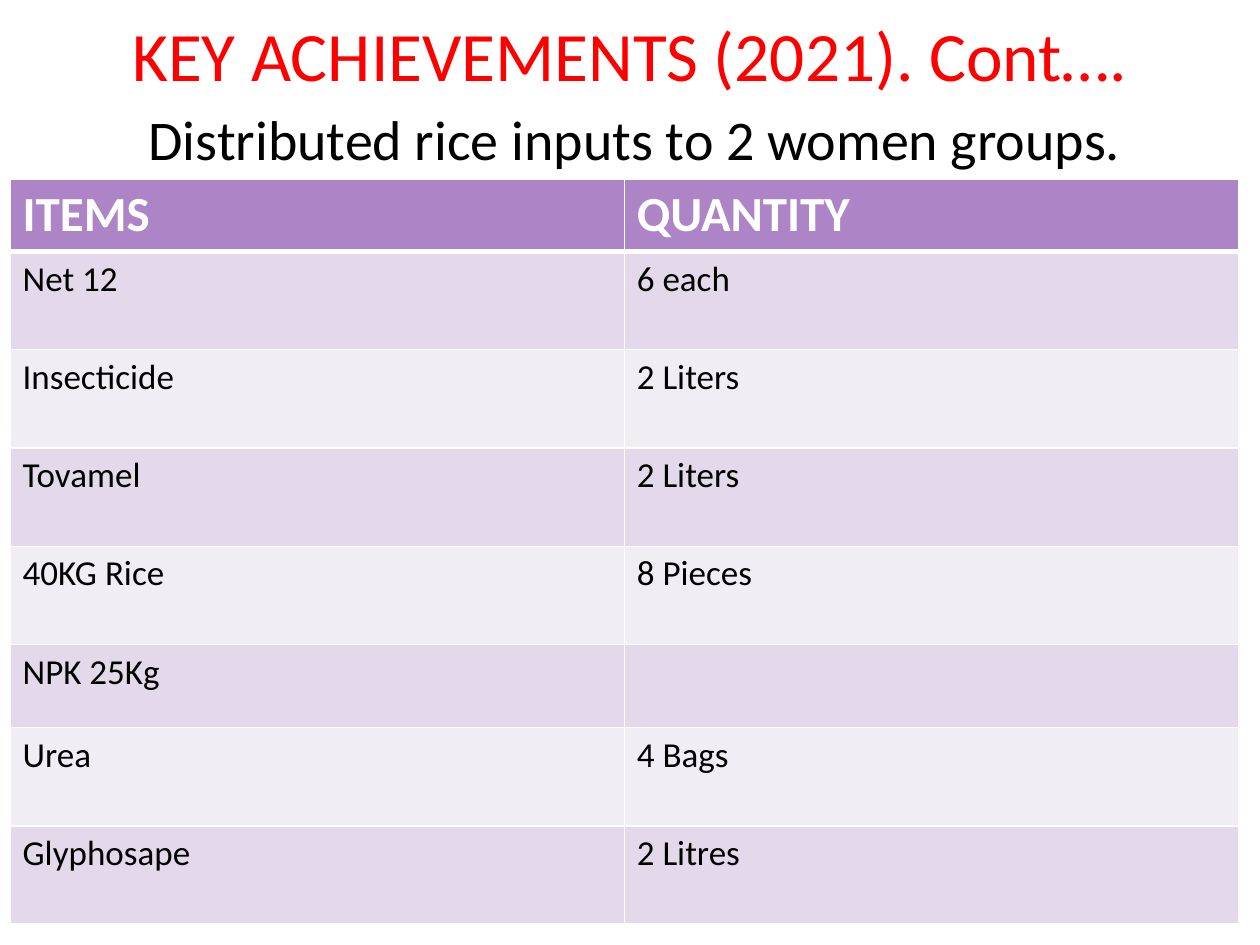
from lxml import etree
from pptx import Presentation
from pptx.dml.color import RGBColor
from pptx.enum.text import MSO_ANCHOR, PP_ALIGN
from pptx.oxml.ns import qn
from pptx.util import Inches, Pt

CENTER = PP_ALIGN.CENTER
MIDDLE = MSO_ANCHOR.MIDDLE
WHITE = "FFFFFF"
HEADER_FILL = "AD84C6"
BAND_FILLS = ["F1EDF5", "E3D9EA"]
ROW_HEIGHT = 0.78

inputs = [
    ("ITEMS", "QUANTITY"),
    ("Net 12", "6 each"),
    ("Insecticide", "2 Liters"),
    ("Tovamel", "2 Liters"),
    ("40KG Rice", "8 Pieces"),
    ("NPK 25Kg", ""),
    ("Urea", "4 Bags"),
    ("Glyphosape", "2 Litres"),
]
row_heights = [ROW_HEIGHT] * len(inputs)
row_heights[0] = 0.55
row_heights[5] = 0.66


def style_text(paragraph, size, color, bold=False):
    for run in paragraph.runs:
        run.font.name = "Calibri"
        run.font.size = Pt(size)
        run.font.bold = bold
        run.font.color.rgb = RGBColor.from_string(color)


def add_border(cell, side, points):
    line = etree.SubElement(cell._tc.get_or_add_tcPr(), qn("a:" + side), w=str(Pt(points)))
    fill = etree.SubElement(line, qn("a:solidFill"))
    etree.SubElement(fill, qn("a:srgbClr"), val=WHITE)


prs = Presentation()
prs.slide_width, prs.slide_height = Inches(10), Inches(7.5)
slide = prs.slides.add_slide(prs.slide_layouts[1])

heading = slide.shapes.title
heading.left, heading.top = Inches(0.5), Inches(0.08)
heading.width, heading.height = Inches(9), Inches(0.7)
heading.text_frame.text = "KEY ACHIEVEMENTS (2021). Cont…."
heading.text_frame.vertical_anchor = MIDDLE
heading.text_frame.paragraphs[0].alignment = CENTER
style_text(heading.text_frame.paragraphs[0], 39.6, "FF0000")

summary = slide.placeholders[1]
summary.left, summary.top = Inches(0.25), Inches(0.78)
summary.width, summary.height = Inches(9.58), Inches(6.38)
summary.text_frame.text = "Distributed rice inputs to 2 women groups."
summary_line = summary.text_frame.paragraphs[0]
summary_line.alignment = CENTER
style_text(summary_line, 32, "000000")
summary_format = summary_line._p.get_or_add_pPr()
summary_format.set("marL", "0")
summary_format.set("indent", "0")
etree.SubElement(summary_format, qn("a:buNone"))

inputs_table = slide.shapes.add_table(
    len(inputs), 2, Inches(0.08), Inches(1.42), Inches(9.75), Inches(sum(row_heights))
).table

for r, (entries, height) in enumerate(zip(inputs, row_heights)):
    inputs_table.rows[r].height = Inches(height)
    is_header = r == 0
    for c, entry in enumerate(entries):
        cell = inputs_table.cell(r, c)
        if entry:
            cell.text_frame.text = entry
            style_text(
                cell.text_frame.paragraphs[0],
                28 if is_header else 20,
                WHITE if is_header else "000000",
                is_header,
            )
        add_border(cell, "lnL", 1)
        add_border(cell, "lnR", 1)
        add_border(cell, "lnT", 3 if r == 1 else 1)
        add_border(cell, "lnB", 3 if is_header else 1)
        cell.fill.solid()
        cell.fill.fore_color.rgb = RGBColor.from_string(
            HEADER_FILL if is_header else BAND_FILLS[r % 2]
        )

prs.save("out.pptx")
